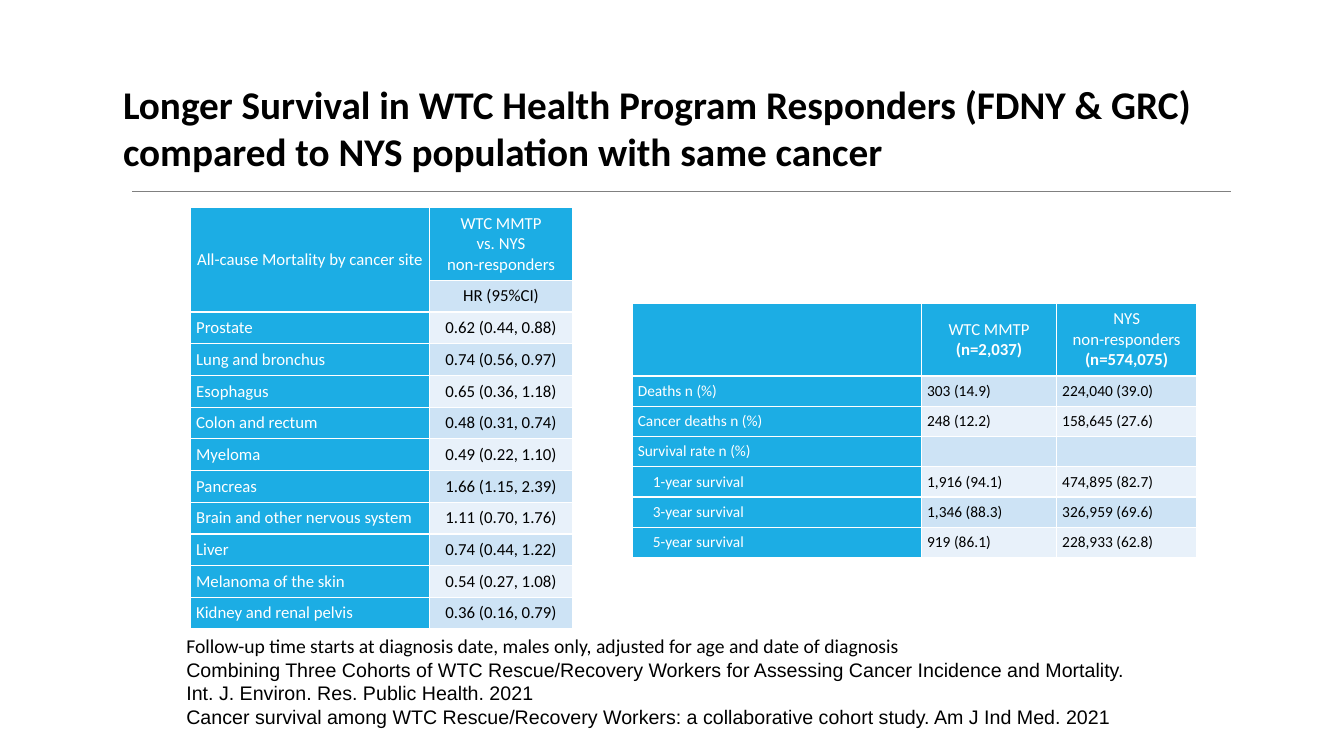
import pptx
import pptx.util
import pptx.dml.color
import pptx.enum.shapes
import pptx.enum.text
import pptx.oxml.ns
import lxml.etree

Inches, Pt = pptx.util.Inches, pptx.util.Pt
PP_ALIGN = pptx.enum.text.PP_ALIGN
ANCHOR = pptx.enum.text.MSO_ANCHOR
qn = pptx.oxml.ns.qn

COLORS = {"black": "000000", "white": "FFFFFF", "blue": "1CADE4",
          "band_dark": "CDE3F5", "band_light": "E8F1FA", "rule": "808080"}

TITLE = ("Longer Survival in WTC Health Program Responders (FDNY & GRC) "
         "compared to NYS population with same cancer")
MORTALITY = [
    ("Prostate", "0.62 (0.44, 0.88)"),
    ("Lung and bronchus", "0.74 (0.56, 0.97)"),
    ("Esophagus", "0.65 (0.36, 1.18)"),
    ("Colon and rectum", "0.48 (0.31, 0.74)"),
    ("Myeloma", "0.49 (0.22, 1.10)"),
    ("Pancreas", "1.66 (1.15, 2.39)"),
    ("Brain and other nervous system", "1.11 (0.70, 1.76)"),
    ("Liver", "0.74 (0.44, 1.22)"),
    ("Melanoma of the skin", "0.54 (0.27, 1.08)"),
    ("Kidney and renal pelvis", "0.36 (0.16, 0.79)"),
]
SURVIVAL = [
    ("Deaths n (%)", "303 (14.9)", "224,040 (39.0)"),
    ("Cancer deaths n (%)", "248 (12.2)", "158,645 (27.6)"),
    ("Survival rate n (%)", "", ""),
    ("1-year survival", "1,916 (94.1)", "474,895 (82.7)"),
    ("3-year survival", "1,346 (88.3)", "326,959 (69.6)"),
    ("5-year survival", "919 (86.1)", "228,933 (62.8)"),
]
NOTES = [
    ("Follow-up time starts at diagnosis date, males only, adjusted for age "
     "and date of diagnosis", "Calibri"),
    ("Combining Three Cohorts of WTC Rescue/Recovery Workers for Assessing "
     "Cancer Incidence and Mortality.", "Arial"),
    ("Int. J. Environ. Res. Public Health. 2021", "Arial"),
    ("Cancer survival among WTC Rescue/Recovery Workers: a collaborative "
     "cohort study. Am J Ind Med. 2021", "Arial"),
]


def rgb(name):
    return pptx.dml.color.RGBColor.from_string(COLORS[name])


def add_run(p, text, size, color="black", bold=False, font="Calibri"):
    r = p.add_run()
    r.text = text
    r.font.name, r.font.size, r.font.bold = font, Pt(size), bold
    r.font.color.rgb = rgb(color)


def add_borders(cell):
    tc_pr = cell._tc.get_or_add_tcPr()
    for side in ("a:lnL", "a:lnR", "a:lnT", "a:lnB"):
        ln = lxml.etree.SubElement(tc_pr, qn(side), w=str(Pt(1)))
        fill = lxml.etree.SubElement(ln, qn("a:solidFill"))
        lxml.etree.SubElement(fill, qn("a:srgbClr"), val=COLORS["white"])


def fill_cell(cell, lines, fill, size, color="black", align=PP_ALIGN.LEFT):
    """Each line is a paragraph: a list of (text, bold) runs."""
    add_borders(cell)
    cell.fill.solid()
    cell.fill.fore_color.rgb = rgb(fill)
    cell.margin_left = cell.margin_right = Pt(4)
    cell.margin_top = cell.margin_bottom = Pt(4)
    cell.vertical_anchor = ANCHOR.MIDDLE
    tf = cell.text_frame
    for i, runs in enumerate(lines):
        p = tf.add_paragraph() if i else tf.paragraphs[0]
        p.alignment = align
        for text, bold in runs:
            add_run(p, text, size, color, bold)
    if not lines:
        # An empty cell keeps the row height of its neighbours
        end = tf.paragraphs[0]._p.get_or_add_endParaRPr()
        end.set("sz", str(size * 100))


def header_cell(cell, *lines):
    fill_cell(cell, lines, "blue", 12, "white", PP_ALIGN.CENTER)


def plain(text):
    return [[(text, False)]] if text else []


def new_table(s, x, y, widths, heights):
    frame = s.shapes.add_table(len(heights), len(widths), Inches(x), Inches(y),
                               Inches(sum(widths)), Inches(sum(heights)))
    table = frame.table
    for col, w in zip(table.columns, widths):
        col.width = Inches(w)
    for row, h in zip(table.rows, heights):
        row.height = Inches(h)
    return table


def add_title(s, x, y, w, h):
    sp = s.shapes.title
    sp.left, sp.top, sp.width, sp.height = map(Inches, (x, y, w, h))
    tf = sp.text_frame
    tf.auto_size = pptx.enum.text.MSO_AUTO_SIZE.NONE
    tf.word_wrap = True
    tf.vertical_anchor = ANCHOR.MIDDLE
    p = tf.paragraphs[0]
    p.alignment = PP_ALIGN.LEFT
    add_run(p, TITLE, 28, bold=True)


def add_rule(s, x, y, w):
    line = s.shapes.add_connector(pptx.enum.shapes.MSO_CONNECTOR.STRAIGHT,
                                  Inches(x), Inches(y), Inches(x + w), Inches(y))
    line.line.color.rgb = rgb("rule")
    line.line.width = Pt(0.5)
    lxml.etree.SubElement(line._element.spPr, qn("a:effectLst"))


def add_mortality_table(s, x, y):
    table = new_table(s, x, y, [2.37, 1.42], [0.72] + [0.31] * (len(MORTALITY) + 1))
    # Header: site label spans both header rows
    header_cell(table.cell(0, 0), [("All-cause Mortality by cancer site", False)])
    header_cell(table.cell(0, 1), [("WTC MMTP", False)], [("vs. NYS", False)],
                [("non-responders", False)])
    header_cell(table.cell(1, 0))
    table.cell(0, 0).merge(table.cell(1, 0))
    fill_cell(table.cell(1, 1), plain("HR (95%CI)"), "band_dark", 12,
              align=PP_ALIGN.CENTER)
    # Body
    for i, (site, ratio) in enumerate(MORTALITY, start=2):
        band = "band_dark" if i % 2 else "band_light"
        fill_cell(table.cell(i, 0), plain(site), "blue", 12, "white")
        fill_cell(table.cell(i, 1), plain(ratio), band, 12, align=PP_ALIGN.CENTER)


def add_survival_table(s, x, y):
    table = new_table(s, x, y, [2.87, 1.34, 1.39], [0.72] + [0.29] * len(SURVIVAL))
    # Header
    header_cell(table.cell(0, 0))
    header_cell(table.cell(0, 1), [("WTC MMTP ", False), ("(n=2,037)", True)])
    header_cell(table.cell(0, 2), [("NYS", False)], [("non-responders", False)],
                [("(n=574,075)", True)])
    # Body
    for i, (label, *values) in enumerate(SURVIVAL, start=1):
        band = "band_dark" if i % 2 else "band_light"
        cell = table.cell(i, 0)
        fill_cell(cell, plain(label), "blue", 11, "white")
        if "-year" in label:
            p_pr = cell.text_frame.paragraphs[0]._p.get_or_add_pPr()
            p_pr.set("marL", "0")
            p_pr.set("indent", str(Inches(0.15)))
        for j, value in enumerate(values, start=1):
            fill_cell(table.cell(i, j), plain(value), band, 11)


def add_notes(s, x, y, w, h):
    tf = s.shapes.add_textbox(*map(Inches, (x, y, w, h))).text_frame
    tf.word_wrap = False
    for i, (text, font) in enumerate(NOTES):
        p = tf.add_paragraph() if i else tf.paragraphs[0]
        add_run(p, text, 14, font=font)


def main():
    prs = pptx.Presentation()
    prs.slide_width, prs.slide_height = Inches(13.33), Inches(7.5)
    s = prs.slides.add_slide(prs.slide_layouts[5])
    add_rule(s, 1.31, 1.9, 10.9)
    add_title(s, 1.12, 0.74, 11.16, 1.04)
    add_mortality_table(s, 1.89, 2.06)
    add_survival_table(s, 6.27, 3.01)
    add_notes(s, 1.75, 6.24, 9.6, 1.04)
    prs.save("out.pptx")


if __name__ == "__main__":
    main()
